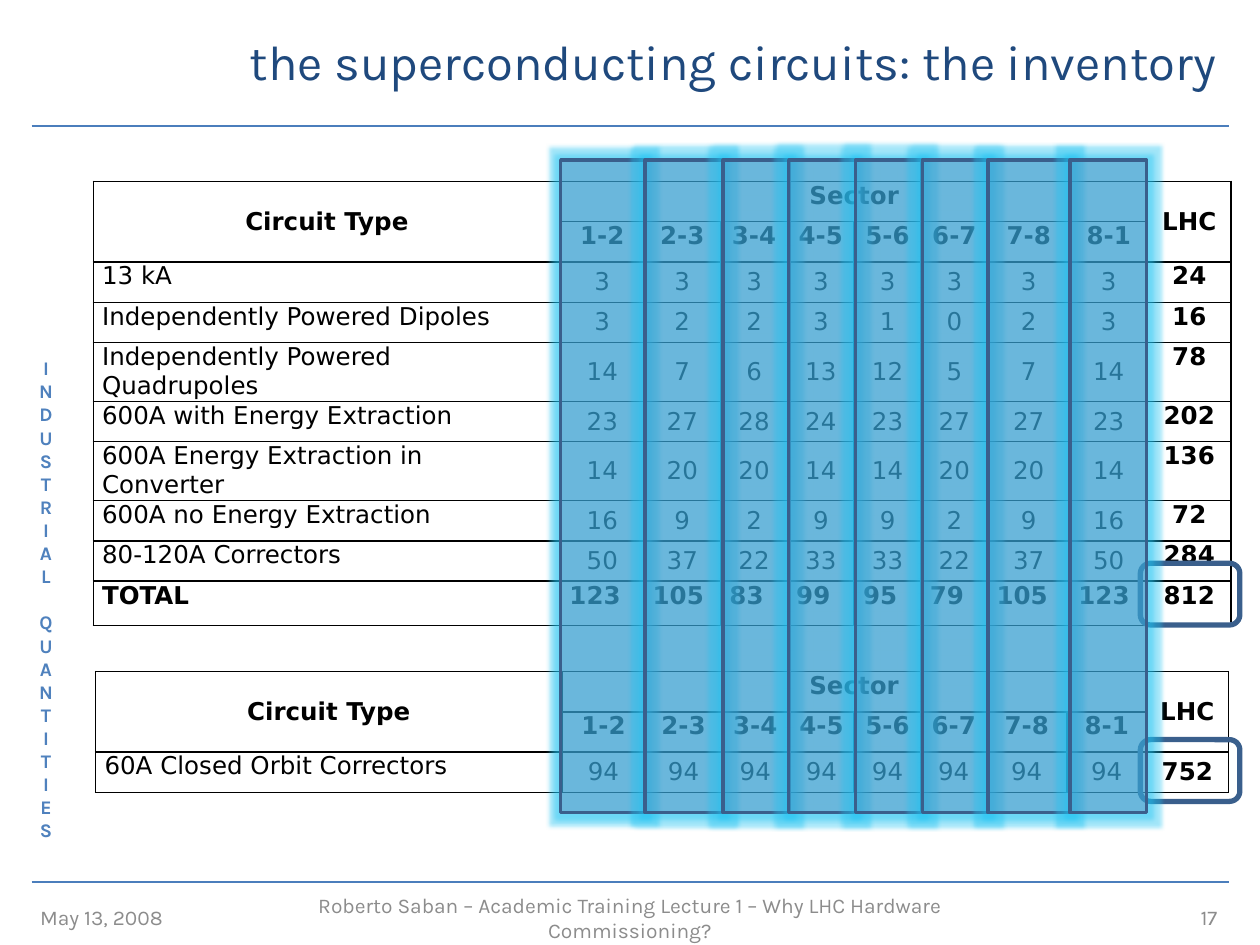
from itertools import pairwise

from lxml import etree
from pptx import Presentation
from pptx.dml.color import RGBColor
from pptx.enum.shapes import MSO_CONNECTOR, MSO_SHAPE
from pptx.enum.text import MSO_ANCHOR, MSO_AUTO_SIZE, PP_ALIGN
from pptx.oxml import parse_xml
from pptx.oxml.ns import nsdecls, qn
from pptx.util import Inches, Pt

LEFT, CENTER, RIGHT = PP_ALIGN.LEFT, PP_ALIGN.CENTER, PP_ALIGN.RIGHT
TOP, MIDDLE = MSO_ANCHOR.TOP, MSO_ANCHOR.MIDDLE
COLORS = {
    "title": "1F497D", "rule": "4B7EBC", "footer": "8C8C8C", "side": "4F81BD",
    "text": "000000", "outline": "3A5F8C", "bar": "666699", "glow": "1BC2F2",
}


def write(tf, text, align, color, **formats):
    p = tf.paragraphs[0]
    p.alignment = align
    r = p.add_run()
    r.text = text
    for name, value in formats.items():
        setattr(r.font, name, value)
    r.font.color.rgb = RGBColor.from_string(COLORS[color])


def add_inventory(left, top, widths, heights, rows):
    shape = slide.shapes.add_table(
        len(rows), len(widths), Inches(left), Inches(top),
        Inches(sum(widths)), Inches(sum(heights)))
    table = shape.table
    table.first_row = table.horz_banding = False
    for column, width in zip(table.columns, widths):
        column.width = Inches(width)
    for row, height in zip(table.rows, heights):
        row.height = Inches(height)
    last = len(widths) - 1
    table.cell(0, 0).merge(table.cell(1, 0))
    table.cell(0, 1).merge(table.cell(0, last - 1))
    table.cell(0, last).merge(table.cell(1, last))

    for i, values in enumerate(rows):
        header, total = i < 2, values[0] == "TOTAL"
        for j, value in enumerate(values):
            cell = table.cell(i, j)
            cell.margin_left = cell.margin_right = Inches(0.07)
            cell.margin_top = cell.margin_bottom = 0
            cell.fill.background()
            for k, side in enumerate(("lnL", "lnR", "lnT", "lnB")):
                cell._tc.get_or_add_tcPr().insert(k, parse_xml(
                    f'<a:{side} {nsdecls("a")} w="12700"><a:solidFill>'
                    f'<a:srgbClr val="{COLORS["text"]}"/></a:solidFill></a:{side}>'))
            if cell.is_spanned:
                continue
            number = not header and not total and 0 < j < last
            middle = number or cell.span_height == 2 or value == "752"
            centered = header or number or j == last
            cell.vertical_anchor = MIDDLE if middle else TOP
            write(cell.text_frame, value, CENTER if centered else LEFT, "text",
                  name="DejaVu Sans", size=Pt(14),
                  bold=header or total or j == last)


prs = Presentation()
prs.slide_width, prs.slide_height = Inches(10), Inches(7.5)
slide = prs.slides.add_slide(prs.slide_layouts[5])

# Rules above and below the content
for y in (1, 7):
    line = slide.shapes.add_connector(
        MSO_CONNECTOR.STRAIGHT, Inches(0.25), Inches(y), Inches(9.75), Inches(y))
    line.line.color.rgb = RGBColor.from_string(COLORS["rule"])
    line.line.width = Pt(1.5)
    etree.SubElement(line._element.spPr, qn("a:effectLst"))

# Title
title = slide.shapes.title
title.left, title.top = Inches(0.74), Inches(0.05)
title.width, title.height = Inches(9.01), Inches(0.87)
title.text_frame.vertical_anchor = MIDDLE
write(title.text_frame, "the superconducting circuits: the inventory",
      RIGHT, "title", name="Karla", size=Pt(28))

# Footer
for text, left, width, align in (
    ("May 13, 2008", 0.22, 1.31, LEFT),
    ("17", 9.22, 0.54, RIGHT),
    ("Roberto Saban – Academic Training Lecture 1 – Why LHC Hardware Commissioning?",
     1.83, 6.34, CENTER),
):
    tf = slide.shapes.add_textbox(
        Inches(left), Inches(7.17), Inches(width), Inches(0.22)).text_frame
    tf.word_wrap = True
    tf.vertical_anchor = MIDDLE
    write(tf, text, align, "footer", name="Karla", size=Pt(12))

# Stacked side label
tf = slide.shapes.add_textbox(
    Inches(0.16), Inches(2.51), Inches(0.41), Inches(4.49)).text_frame
tf.word_wrap = False
tf.auto_size = MSO_AUTO_SIZE.SHAPE_TO_FIT_TEXT
tf._txBody.bodyPr.set("vert", "wordArtVert")
write(tf, "INDUSTRIAL QUANTITIES", CENTER, "side",
      name="Karla", size=Pt(11), bold=True)

# Inventory tables
header = [
    ["Circuit Type", "Sector", *[""] * 7, "LHC"],
    ["", "1-2", "2-3", "3-4", "4-5", "5-6", "6-7", "7-8", "8-1", ""],
]
circuits = [
    ("13 kA", "3 3 3 3 3 3 3 3 24"),
    ("Independently Powered Dipoles", "3 2 2 3 1 0 2 3 16"),
    ("Independently Powered Quadrupoles", "14 7 6 13 12 5 7 14 78"),
    ("600A with Energy Extraction", "23 27 28 24 23 27 27 23 202"),
    ("600A Energy Extraction in Converter", "14 20 20 14 14 20 20 14 136"),
    ("600A no Energy Extraction", "16 9 2 9 9 2 9 16 72"),
    ("80-120A Correctors", "50 37 22 33 33 22 37 50 284"),
    ("TOTAL", "123 105 83 99 95 79 105 123 812"),
]
correctors = [("60A Closed Orbit Correctors", "94 94 94 94 94 94 94 94 752")]
for left, top, widths, heights, data in (
    (0.74, 1.44, [3.71, 0.66, 0.61, *[0.53] * 4, 0.65, 0.62, 0.66],
     [0.32] * 9 + [0.35], circuits),
    (0.76, 5.33, [3.7, 0.66, 0.61, *[0.53, 0.52] * 2, 0.64, 0.63, 0.65],
     [0.32] * 3, correctors),
):
    add_inventory(left, top, widths, heights,
                  header + [[name, *counts.split()] for name, counts in data])

# Frames around the totals, then glowing sector bars
edges = [4.45, 5.12, 5.74, 6.26, 6.79, 7.32, 7.84, 8.49, 9.1]
frames = [(MSO_SHAPE.ROUNDED_RECTANGLE, 9.05, y, 0.79, 0.49, 3) for y in (4.47, 5.87)]
bars = [(MSO_SHAPE.RECTANGLE, a, 1.27, b - a, 5.18, 2) for a, b in pairwise(edges)]
for kind, left, top, width, height, weight in frames + bars:
    sp = slide.shapes.add_shape(
        kind, Inches(left), Inches(top), Inches(width), Inches(height))
    sp.shadow.inherit = False
    sp.line.color.rgb = RGBColor.from_string(COLORS["outline"])
    sp.line.width = Pt(weight)
    if kind == MSO_SHAPE.ROUNDED_RECTANGLE:
        sp.fill.background()
        continue
    sp.fill.solid()
    sp.fill.fore_color.rgb = RGBColor.from_string(COLORS["bar"])
    spPr = sp._element.spPr
    color = spPr.find(qn("a:solidFill")).find(qn("a:srgbClr"))
    etree.SubElement(color, qn("a:alpha")).set("val", "28000")
    spPr.find(qn("a:effectLst")).append(parse_xml(
        f'<a:glow {nsdecls("a")} rad="63500"><a:srgbClr val="{COLORS["glow"]}">'
        '<a:alpha val="40000"/></a:srgbClr></a:glow>'))

prs.save("out.pptx")
